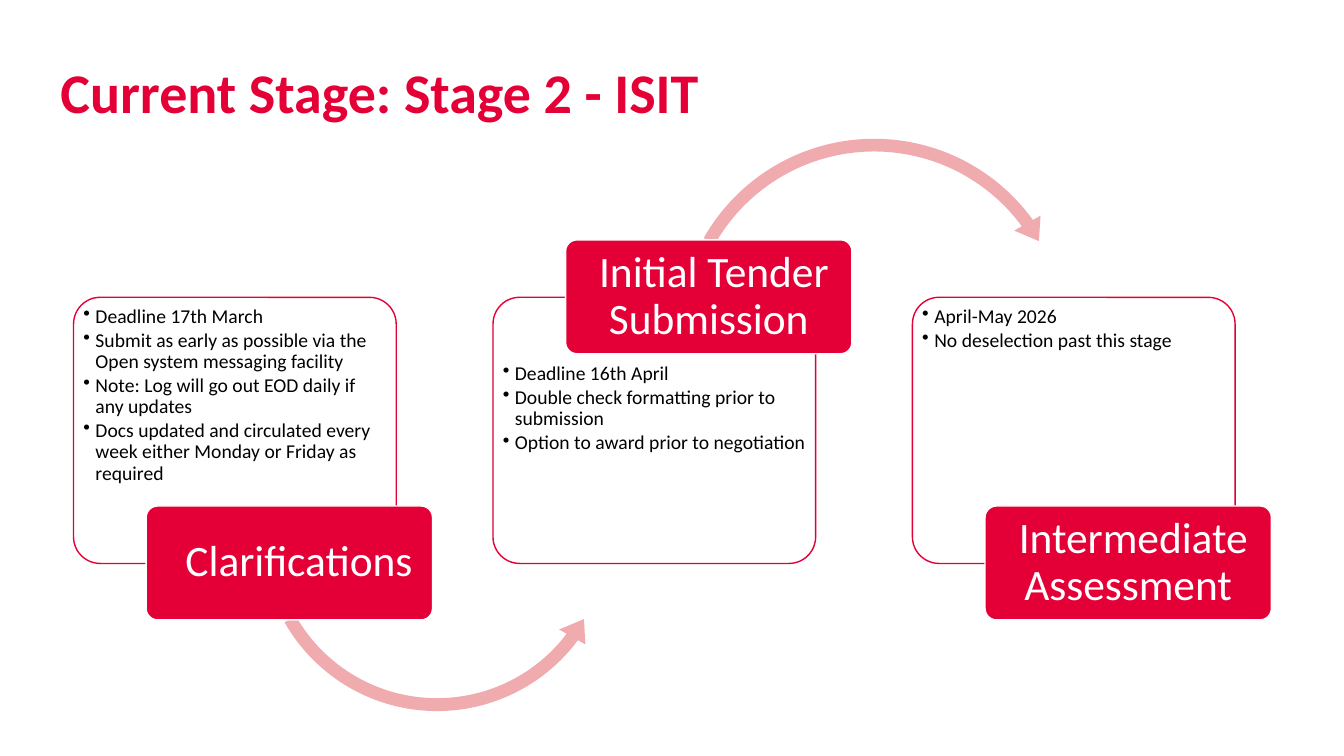
from lxml import etree
from pptx import Presentation
from pptx import util as u
from pptx.dml.color import RGBColor
from pptx.enum import shapes, text
from pptx.oxml import ns

FONT = "Calibri"
RED, PINK, WHITE, BLACK = "E40037", "EFABAE", "FFFFFF", "000000"
CARD_W, CARD_H, CARD_TOP = 3.2, 2.64, 2.95
LABEL_W, LABEL_H, LABEL_SHIFT = 2.84, 1.13, 0.72
FIRST_LEFT, STAGE_STEP = 0.73, 4.16

# Arrow: preset, offset from the card's corner, side of its square, adjustments
UNDER = (shapes.MSO_SHAPE.LEFT_CIRCULAR_ARROW, 1.78, 0.54, 3.65,
         (0.035, 4.334, 22.089, 90.245, 0.041))
OVER = (shapes.MSO_SHAPE.CIRCULAR_ARROW, 1.75, -1.66, 4.06,
        (0.031, 3.865, 194.379, 125.755, 0.037))

# Label, its first-line indent, whether it sits on top, arrow, points
STAGES = [
    ("Clarifications", 0.19, False, UNDER, [
        "Deadline 17th March",
        "Submit as early as possible via the Open system messaging facility",
        "Note: Log will go out EOD daily if any updates",
        "Docs updated and circulated every week either Monday or Friday as required",
    ]),
    ("Initial Tender Submission", 0.1, True, OVER, [
        "Deadline 16th April",
        "Double check formatting prior to submission",
        "Option to award prior to negotiation",
    ]),
    ("Intermediate Assessment", 0.1, False, None, [
        "April-May 2026",
        "No deselection past this stage",
    ]),
]


def rgb(value):
    return RGBColor.from_string(value)


def set_font(paragraph, size, color, bold=False):
    font = paragraph.font
    font.name, font.size, font.bold = FONT, u.Pt(size), bold
    font.color.rgb = rgb(color)


def set_frame(frame, insets, anchor=text.MSO_ANCHOR.TOP):
    """Wrap the text and set its left, top, right and bottom insets."""
    frame.word_wrap = True
    frame.vertical_anchor = anchor
    (frame.margin_left, frame.margin_top,
     frame.margin_right, frame.margin_bottom) = map(u.Inches, insets)


def add_preset(slide, preset, box, fill, line=None):
    shape = slide.shapes.add_shape(preset, *map(u.Inches, box))
    shape.shadow.inherit = False
    shape.fill.solid()
    shape.fill.fore_color.rgb = rgb(fill)
    if line:
        shape.line.color.rgb = rgb(line)
        shape.line.width = u.Pt(1)
    else:
        shape.line.fill.background()
    return shape


def add_rounded(slide, box, fill, line):
    shape = add_preset(slide, shapes.MSO_SHAPE.ROUNDED_RECTANGLE, box, fill, line)
    shape.adjustments[0] = 0.1
    return shape


def add_title(slide, box, wording):
    frame = slide.shapes.add_textbox(*map(u.Inches, box)).text_frame
    set_frame(frame, (0, 0, 0, 0))
    frame.text = wording
    set_font(frame.paragraphs[0], 40, RED, bold=True)


def add_card(slide, box, points, text_top):
    frame = add_rounded(slide, box, WHITE, RED).text_frame
    set_frame(frame, (0.02, text_top, 0, 0.01))
    for number, point in enumerate(points):
        paragraph = frame.add_paragraph() if number else frame.paragraphs[0]
        paragraph.text = point
        paragraph.alignment = text.PP_ALIGN.LEFT
        paragraph.line_spacing = 0.9
        paragraph.space_after = u.Pt(2.1)
        properties = paragraph._p.get_or_add_pPr()
        properties.set("marL", str(u.Inches(0.12)))
        properties.set("indent", str(u.Inches(-0.12)))
        etree.SubElement(properties, ns.qn("a:buChar"), char="•")
        set_font(paragraph, 14, BLACK)


def add_label(slide, box, wording, indent):
    frame = add_rounded(slide, box, RED, WHITE).text_frame
    set_frame(frame, (0.06, 0.04, 0.06, 0.04), text.MSO_ANCHOR.MIDDLE)
    frame.text = wording
    paragraph = frame.paragraphs[0]
    paragraph.alignment = text.PP_ALIGN.CENTER
    paragraph.line_spacing = 0.9
    paragraph._p.get_or_add_pPr().set("indent", str(u.Inches(indent)))
    set_font(paragraph, 31, WHITE)


def add_arrow(slide, left, top, arrow):
    preset, dx, dy, side, adjustments = arrow
    shape = add_preset(slide, preset, (left + dx, top + dy, side, side), PINK)
    for number, value in enumerate(adjustments):
        shape.adjustments[number] = value


def add_stage(slide, left, top, stage):
    """Place a card, the arrow to the next stage and the overlapping label."""
    wording, indent, on_top, arrow, points = stage
    label_top = top + (-0.57 if on_top else 2.07)
    add_card(slide, (left, top, CARD_W, CARD_H), points, 0.58 if on_top else 0.01)
    if arrow:
        add_arrow(slide, left, top, arrow)
    add_label(slide, (left + LABEL_SHIFT, label_top, LABEL_W, LABEL_H),
              wording, indent)


def main():
    deck = Presentation()
    deck.slide_width, deck.slide_height = u.Inches(13.33), u.Inches(7.5)
    slide = deck.slides.add_slide(deck.slide_layouts[6])
    add_title(slide, (0.6, 0.57, 10.56, 1.22), "Current Stage: Stage 2 - ISIT")
    for number, stage in enumerate(STAGES):
        add_stage(slide, FIRST_LEFT + number * STAGE_STEP, CARD_TOP, stage)
    deck.save("out.pptx")


if __name__ == "__main__":
    main()
